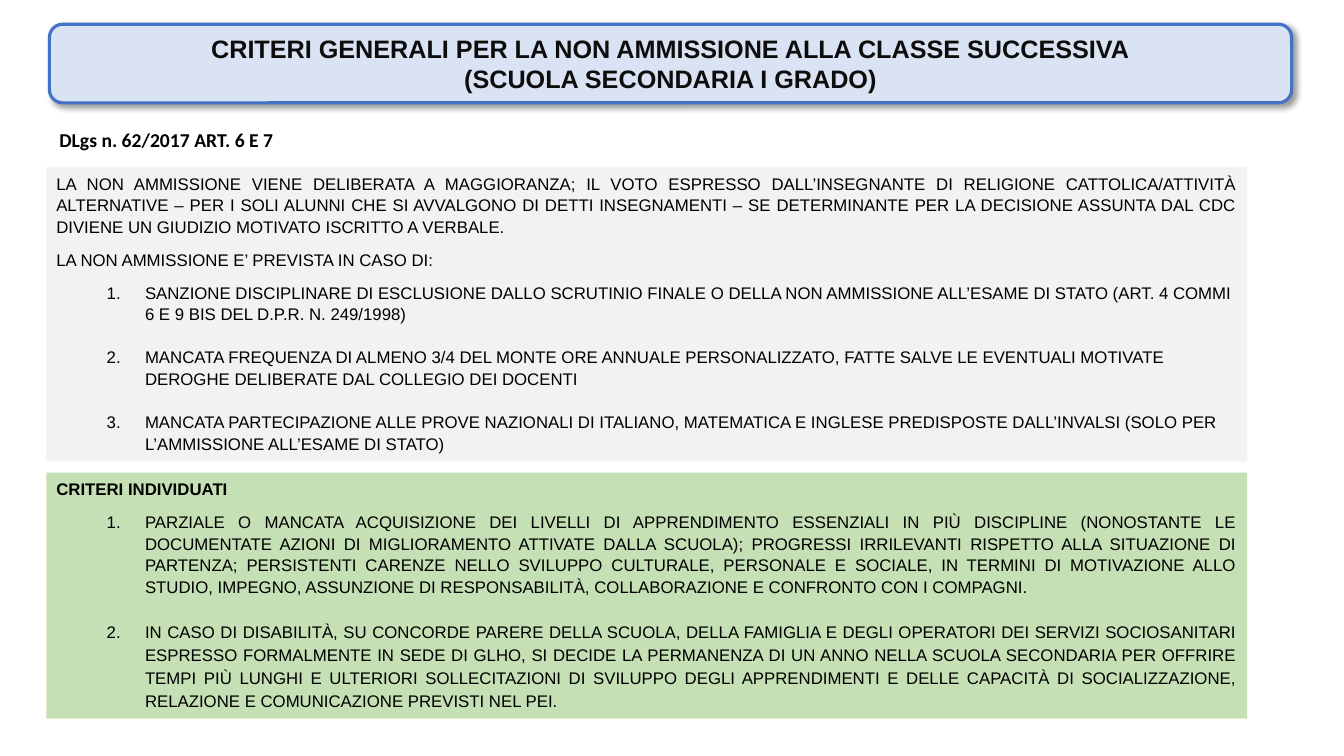
from lxml import etree
from pptx import Presentation
from pptx import util as u
from pptx.dml.color import RGBColor
from pptx.enum import shapes, text
from pptx.oxml.ns import qn

COLORS = {"title_fill": "DAE3F3", "title_line": "4472C4", "title_text": "0D0D0D",
          "rules_fill": "F2F2F2", "criteria_fill": "C5E0B4", "text": "000000"}

TITLE = ["CRITERI GENERALI PER LA NON AMMISSIONE ALLA CLASSE SUCCESSIVA",
         "(SCUOLA SECONDARIA I GRADO)"]
LAW = "DLgs n. 62/2017 ART. 6 E 7"
RULES_INTRO = [
    "LA NON AMMISSIONE VIENE DELIBERATA A MAGGIORANZA; IL VOTO ESPRESSO DALL’INSEGNANTE DI RELIGIONE "
    "CATTOLICA/ATTIVITÀ ALTERNATIVE – PER I SOLI ALUNNI CHE SI AVVALGONO DI DETTI INSEGNAMENTI – SE "
    "DETERMINANTE PER LA DECISIONE ASSUNTA DAL CDC DIVIENE UN GIUDIZIO MOTIVATO ISCRITTO A VERBALE.",
    "LA NON AMMISSIONE E’ PREVISTA IN CASO DI:",
]
RULES = [
    "SANZIONE DISCIPLINARE DI ESCLUSIONE DALLO SCRUTINIO FINALE O DELLA NON AMMISSIONE ALL’ESAME DI "
    "STATO (ART. 4 COMMI 6 E 9 BIS DEL D.P.R. N. 249/1998)",
    "MANCATA FREQUENZA DI ALMENO 3/4 DEL MONTE ORE ANNUALE PERSONALIZZATO, FATTE SALVE LE EVENTUALI "
    "MOTIVATE DEROGHE DELIBERATE DAL COLLEGIO DEI DOCENTI",
    "MANCATA PARTECIPAZIONE ALLE PROVE NAZIONALI DI ITALIANO, MATEMATICA E INGLESE PREDISPOSTE "
    "DALL’INVALSI (SOLO PER L’AMMISSIONE ALL’ESAME DI STATO)",
]
CRITERIA_HEADING = "CRITERI INDIVIDUATI"
CRITERIA = [
    "PARZIALE O MANCATA ACQUISIZIONE DEI LIVELLI DI APPRENDIMENTO ESSENZIALI IN PIÙ DISCIPLINE "
    "(NONOSTANTE LE DOCUMENTATE AZIONI DI MIGLIORAMENTO ATTIVATE DALLA SCUOLA); PROGRESSI IRRILEVANTI "
    "RISPETTO ALLA SITUAZIONE DI PARTENZA; PERSISTENTI CARENZE NELLO SVILUPPO CULTURALE, PERSONALE E "
    "SOCIALE, IN TERMINI DI MOTIVAZIONE ALLO STUDIO, IMPEGNO, ASSUNZIONE DI RESPONSABILITÀ, "
    "COLLABORAZIONE E CONFRONTO CON I COMPAGNI.",
    "IN CASO DI DISABILITÀ, SU CONCORDE PARERE DELLA SCUOLA, DELLA FAMIGLIA E DEGLI OPERATORI DEI "
    "SERVIZI SOCIOSANITARI ESPRESSO FORMALMENTE IN SEDE DI GLHO, SI DECIDE LA PERMANENZA DI UN ANNO "
    "NELLA SCUOLA SECONDARIA PER OFFRIRE TEMPI PIÙ LUNGHI E ULTERIORI SOLLECITAZIONI DI SVILUPPO DEGLI "
    "APPRENDIMENTI E DELLE CAPACITÀ DI SOCIALIZZAZIONE, RELAZIONE E COMUNICAZIONE PREVISTI NEL PEI.",
]

LEFT, JUSTIFY, CENTER = text.PP_ALIGN.LEFT, text.PP_ALIGN.JUSTIFY, text.PP_ALIGN.CENTER
LINE_SPACING, PARAGRAPH_GAP, ITEM_GAP = 1.07, 8, 15.5
BOX_LEFT, BOX_WIDTH = 0.46, 11.91

prs = Presentation()
prs.slide_width, prs.slide_height = u.Inches(13.33), u.Inches(7.5)
slide = prs.slides.add_slide(prs.slide_layouts[6])


def add_box(kind, place, fill, anchor):
    box = slide.shapes.add_shape(kind, *map(u.Inches, place))
    box.shadow.inherit = False
    box.fill.solid()
    box.fill.fore_color.rgb = RGBColor.from_string(COLORS[fill])
    box.line.fill.background()
    box.text_frame.word_wrap = True
    box.text_frame.vertical_anchor = anchor
    return box


def write(frame, words, align, size=12, bold=False, font="Arial", color="text", spacing=1.0, after=0):
    first = frame.paragraphs[0]
    paragraph = frame.add_paragraph() if first.runs else first
    paragraph.text = words
    paragraph.alignment = align
    paragraph.line_spacing = spacing
    paragraph.space_after = u.Pt(after)
    paragraph.font.name, paragraph.font.size, paragraph.font.bold = font, u.Pt(size), bold
    paragraph.font.color.rgb = RGBColor.from_string(COLORS[color])
    return paragraph


def write_item(frame, words, align, spacing=LINE_SPACING, after=ITEM_GAP):
    item = write(frame, words, align, spacing=spacing, after=after)
    item.level = 1
    props = item._p.get_or_add_pPr()
    props.set("marL", str(u.Inches(0.88)))
    props.set("indent", str(u.Inches(-0.38)))
    number = etree.Element(qn("a:buAutoNum"), type="arabicPeriod")
    props.find(qn("a:defRPr")).addprevious(number)


# Title banner with a soft shadow
banner = add_box(shapes.MSO_SHAPE.ROUNDED_RECTANGLE, (0.49, 0.24, 12.32, 0.78),
                 "title_fill", text.MSO_ANCHOR.MIDDLE)
banner.line.color.rgb = RGBColor.from_string(COLORS["title_line"])
banner.line.width = u.Pt(2.25)
effects = banner._element.spPr.find(qn("a:effectLst"))
shadow = etree.SubElement(effects, qn("a:outerShdw"), blurRad=str(u.Pt(4)), dist=str(u.Pt(3)),
                          dir=str(45 * 60000), algn="tl", rotWithShape="0")
shade = etree.SubElement(shadow, qn("a:srgbClr"), val="000000")
etree.SubElement(shade, qn("a:alpha"), val="40000")
for line in TITLE:
    write(banner.text_frame, line, CENTER, size=18, bold=True, color="title_text")

# Reference to the law
law = slide.shapes.add_textbox(*map(u.Inches, (0.49, 1.2, 2.34, 0.34)))
law.text_frame.word_wrap = False
write(law.text_frame, LAW, JUSTIFY, size=14, bold=True, font="Calibri",
      spacing=LINE_SPACING, after=PARAGRAPH_GAP)

# General rules
rules = add_box(shapes.MSO_SHAPE.RECTANGLE, (BOX_LEFT, 1.66, BOX_WIDTH, 2.92),
                "rules_fill", text.MSO_ANCHOR.TOP).text_frame
for words in RULES_INTRO:
    write(rules, words, JUSTIFY, spacing=LINE_SPACING, after=PARAGRAPH_GAP)
for words in RULES:
    write_item(rules, words, LEFT, after=0 if words == RULES[-1] else ITEM_GAP)

# Criteria chosen by the school
criteria = add_box(shapes.MSO_SHAPE.RECTANGLE, (BOX_LEFT, 4.69, BOX_WIDTH, 2.44),
                   "criteria_fill", text.MSO_ANCHOR.TOP).text_frame
write(criteria, CRITERIA_HEADING, JUSTIFY, bold=True, spacing=LINE_SPACING, after=PARAGRAPH_GAP)
write_item(criteria, CRITERIA[0], JUSTIFY)
write_item(criteria, CRITERIA[1], JUSTIFY, spacing=1.15, after=6)

prs.save("out.pptx")
